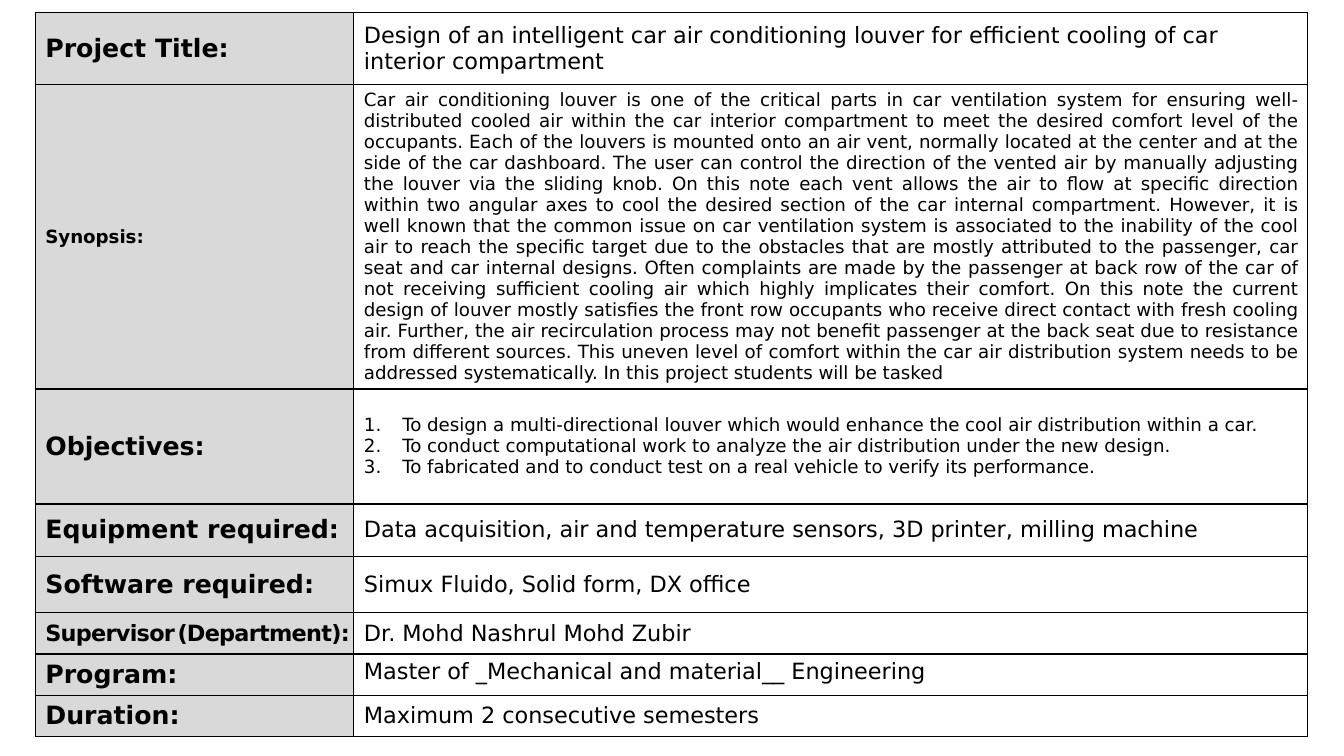
"""Build a one-slide project proposal sheet as a table."""
import pptx
import pptx.dml.color
import pptx.enum.text
import pptx.oxml
import pptx.oxml.ns
import pptx.util

Inches = pptx.util.Inches
Pt = pptx.util.Pt
RGBColor = pptx.dml.color.RGBColor
Anchor = pptx.enum.text.MSO_ANCHOR
Align = pptx.enum.text.PP_ALIGN

BLACK = RGBColor(0x00, 0x00, 0x00)
GREY = RGBColor(0xD9, 0xD9, 0xD9)
WHITE = RGBColor(0xFF, 0xFF, 0xFF)

SYNOPSIS = " ".join([
    "Car air conditioning louver is one of the critical parts in car ventilation system "
    "for ensuring well-distributed cooled air within the car interior compartment to meet "
    "the desired comfort level of the occupants.",
    "Each of the louvers is mounted onto an air vent, normally located at the center and at "
    "the side of the car dashboard.",
    "The user can control the direction of the vented air by manually adjusting the louver "
    "via the sliding knob.",
    "On this note each vent allows the air to flow at specific direction within two "
    "angular axes to cool the desired section of the car internal compartment.",
    "However, it is well known that the common issue on car ventilation system is associated "
    "to the inability of the cool air to reach the specific target due to the obstacles that "
    "are mostly attributed to the passenger, car seat and car internal designs.",
    "Often complaints are made by the passenger at back row of the car of not receiving "
    "sufficient cooling air which highly implicates their comfort.",
    "On this note the current design of louver mostly satisfies the front row occupants who "
    "receive direct contact with fresh cooling air.",
    "Further, the air recirculation process may not benefit passenger at the back seat due to "
    "resistance from different sources.",
    "This uneven level of comfort within the car air distribution system needs to be "
    "addressed systematically.",
    "In this project students will be tasked",
])
GOALS = "\n".join([
    "To design a multi-directional louver which would enhance the cool air distribution within a car.",
    "To conduct computational work to analyze the air distribution under the new design.",
    "To fabricated and to conduct test on a real vehicle to verify its performance.",
])
TITLE = ("Design of an intelligent car air conditioning louver for efficient cooling "
         "of car interior compartment")
ROWS = [
    (0.72, "Project Title:", 18, TITLE, 16),
    (3.02, "Synopsis:", 13, SYNOPSIS, 13),
    (1.14, "Objectives:", 18, GOALS, 13),
    (0.52, "Equipment required:", 18,
     "Data acquisition, air and temperature sensors, 3D printer, milling machine", 16),
    (0.56, "Software required:", 18, "Simux Fluido, Solid form, DX office", 16),
    (0.41, "Supervisor", 16, "Dr. Mohd Nashrul Mohd Zubir", 16),
    (0.41, "Program:", 18, "Master of _Mechanical and material__ Engineering", 16),
    (0.41, "Duration:", 18, "Maximum 2 consecutive semesters", 16),
]


class Sheet:
    """Hold the style and the current slide."""

    def __init__(self, deck, font):
        self.slide = deck.slides.add_slide(deck.slide_layouts[6])
        self.font = font

    def table(self, left, top, widths, heights):
        """Add an unstyled table and return it."""
        frame = self.slide.shapes.add_table(
            len(heights), len(widths), Inches(left), Inches(top),
            Inches(sum(widths)), Inches(sum(heights)))
        grid = frame.table
        grid.first_row = grid.horz_banding = False
        for col, width in zip(grid.columns, widths):
            col.width = Inches(width)
        for row, height in zip(grid.rows, heights):
            row.height = Inches(height)
        return grid

    def style(self, run, size, bold):
        """Format one run."""
        run.font.name = self.font
        run.font.size = Pt(size)
        run.font.bold = bold
        run.font.color.rgb = BLACK

    def cell(self, cell, text, size, bold, fill):
        """Fill, frame and write one cell."""
        cell.text_frame.text = text
        cell.vertical_anchor = Anchor.MIDDLE
        for para in cell.text_frame.paragraphs:
            for run in para.runs:
                self.style(run, size, bold)
        self.border(cell)
        cell.fill.solid()
        cell.fill.fore_color.rgb = fill

    def border(self, cell):
        """Draw a thin black line on all four sides."""
        props = cell._tc.get_or_add_tcPr()
        for side in ("lnL", "lnR", "lnT", "lnB"):
            props.append(pptx.oxml.parse_xml(
                f'<a:{side} {pptx.oxml.ns.nsdecls("a")} w="{Pt(1)}">'
                f'<a:solidFill><a:srgbClr val="{BLACK}"/></a:solidFill></a:{side}>'))

    def number(self, cell, indent):
        """Number the paragraphs of a cell."""
        for para in cell.text_frame.paragraphs:
            props = para._p.get_or_add_pPr()
            props.set("marL", str(Inches(indent)))
            props.set("indent", str(-Inches(indent)))
            props.append(pptx.oxml.parse_xml(
                f'<a:buAutoNum {pptx.oxml.ns.nsdecls("a")} type="arabicPeriod"/>'))

    def extend(self, cell, parts, space):
        """Append bold runs and tighten the letter spacing."""
        para = cell.text_frame.paragraphs[0]
        for text, size in parts:
            run = para.add_run()
            run.text = text
            self.style(run, size, True)
        for run in para.runs:
            run._r.get_or_add_rPr().set("spc", str(space))


def main():
    deck = pptx.Presentation()
    deck.slide_width = Inches(13.33)
    deck.slide_height = Inches(7.5)
    sheet = Sheet(deck, "DejaVu Sans")
    grid = sheet.table(0.35, 0.12, [3.16, 9.46], [row[0] for row in ROWS])
    for i, (_, label, big, text, size) in enumerate(ROWS):
        sheet.cell(grid.cell(i, 0), label, big, True, GREY)
        sheet.cell(grid.cell(i, 1), text, size, False, WHITE)
    grid.cell(1, 1).text_frame.paragraphs[0].alignment = Align.JUSTIFY
    sheet.number(grid.cell(2, 1), 0.38)
    boss = grid.cell(5, 0)
    boss.margin_right = 0
    sheet.extend(boss, [(" ", 5), ("(Department):", 16)], -50)
    grid.cell(6, 1).vertical_anchor = Anchor.TOP
    deck.save("out.pptx")


if __name__ == "__main__":
    main()
